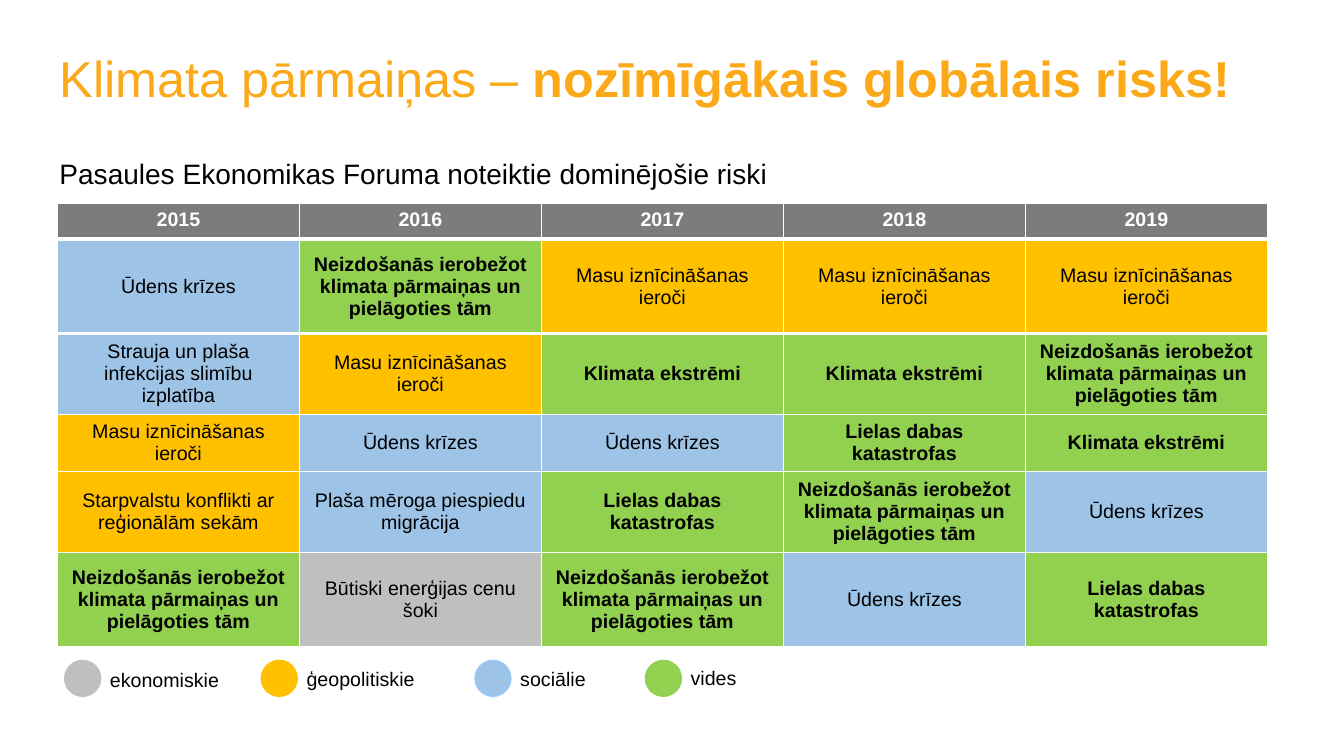
import lxml.etree
import pptx
import pptx.dml.color
import pptx.enum.shapes
import pptx.enum.text
import pptx.oxml.ns
import pptx.util
from pptx.dml.color import RGBColor
from pptx.util import Inches

ORANGE = RGBColor(0xFB, 0xA9, 0x19)
BLACK = RGBColor(0x00, 0x00, 0x00)
WHITE = RGBColor(0xFF, 0xFF, 0xFF)
HEADER_GREY = RGBColor(0x7C, 0x7C, 0x7C)
ECONOMIC = RGBColor(0xBF, 0xBF, 0xBF)
GEOPOLITICAL = RGBColor(0xFF, 0xC0, 0x00)
SOCIAL = RGBColor(0x9D, 0xC3, 0xE6)
SOCIAL_EDGE = RGBColor(0x99, 0xCC, 0xFF)
ENVIRONMENTAL = RGBColor(0x92, 0xD0, 0x50)

WEAPONS = "Masu iznīcināšanas ieroči"
WATER = "Ūdens krīzes"
EPIDEMICS = "Strauja un plaša infekcijas slimību izplatība"
CONFLICTS = "Starpvalstu konflikti ar reģionālām sekām"
MIGRATION = "Plaša mēroga piespiedu migrācija"
ENERGY = "Būtiski enerģijas cenu šoki"
CLIMATE_FAILURE = "Neizdošanās ierobežot klimata pārmaiņas un pielāgoties tām"
EXTREMES = "Klimata ekstrēmi"
DISASTERS = "Lielas dabas katastrofas"

RISK_COLORS = {
    WEAPONS: GEOPOLITICAL,
    CONFLICTS: GEOPOLITICAL,
    WATER: SOCIAL,
    EPIDEMICS: SOCIAL,
    MIGRATION: SOCIAL,
    ENERGY: ECONOMIC,
    CLIMATE_FAILURE: ENVIRONMENTAL,
    EXTREMES: ENVIRONMENTAL,
    DISASTERS: ENVIRONMENTAL,
}

RISKS_BY_YEAR = {
    "2015": [WATER, EPIDEMICS, WEAPONS, CONFLICTS, CLIMATE_FAILURE],
    "2016": [CLIMATE_FAILURE, WEAPONS, WATER, MIGRATION, ENERGY],
    "2017": [WEAPONS, EXTREMES, WATER, DISASTERS, CLIMATE_FAILURE],
    "2018": [WEAPONS, EXTREMES, DISASTERS, CLIMATE_FAILURE, WATER],
    "2019": [WEAPONS, CLIMATE_FAILURE, EXTREMES, WATER, DISASTERS],
}
ROW_HEIGHTS = [0.35, 0.94, 0.75, 0.53, 0.75, 0.94]

LEGEND = [
    ("ekonomiskie", ECONOMIC, ECONOMIC, 0.64, 6.58, 1.33),
    ("ģeopolitiskie", GEOPOLITICAL, GEOPOLITICAL, 2.59, 6.57, 1.32),
    ("sociālie", SOCIAL, SOCIAL_EDGE, 4.71, 6.57, 0.9),
    ("vides", ENVIRONMENTAL, ENVIRONMENTAL, 6.4, 6.56, 0.7),
]
DOT_SIZE = 0.36


def add_text(paragraph, text, size=14, color=BLACK, bold=False):
    run = paragraph.add_run()
    run.text = text
    run.font.name = "Arial"
    run.font.size = pptx.util.Pt(size)
    run.font.bold = bold
    run.font.color.rgb = color


def add_text_box(slide, left, top, width, height, wrap=False):
    frame = slide.shapes.add_textbox(
        Inches(left), Inches(top), Inches(width), Inches(height)
    ).text_frame
    frame.margin_left = frame.margin_right = Inches(0.09)
    frame.word_wrap = wrap
    if not wrap:
        frame.auto_size = pptx.enum.text.MSO_AUTO_SIZE.SHAPE_TO_FIT_TEXT
    return frame.paragraphs[0]


def add_border(cell, side, points):
    qn = pptx.oxml.ns.qn
    border = lxml.etree.Element(qn(f"a:{side}"), w=str(int(pptx.util.Pt(points))))
    fill = lxml.etree.SubElement(border, qn("a:solidFill"))
    lxml.etree.SubElement(fill, qn("a:srgbClr"), val=str(WHITE))
    cell._tc.get_or_add_tcPr().insert(0, border)


def fill_cell(cell, text, fill, **text_format):
    cell.fill.solid()
    cell.fill.fore_color.rgb = fill
    cell.margin_left = cell.margin_right = Inches(0.09)
    paragraph = cell.text_frame.paragraphs[0]
    paragraph.alignment = pptx.enum.text.PP_ALIGN.CENTER
    add_text(paragraph, text, **text_format)


def add_risk_table(slide):
    table = slide.shapes.add_table(
        len(ROW_HEIGHTS), len(RISKS_BY_YEAR),
        Inches(0.57), Inches(2.02), Inches(12), Inches(sum(ROW_HEIGHTS)),
    ).table
    table.horz_banding = False
    for row, height in zip(table.rows, ROW_HEIGHTS):
        row.height = Inches(height)
    for column, (year, risks) in enumerate(RISKS_BY_YEAR.items()):
        header = table.cell(0, column)
        fill_cell(header, year, HEADER_GREY, color=WHITE, bold=True)
        add_border(header, "lnB", 3)
        add_border(table.cell(1, column), "lnT", 3)
        for rank, risk in enumerate(risks, start=1):
            cell = table.cell(rank, column)
            cell.vertical_anchor = pptx.enum.text.MSO_ANCHOR.MIDDLE
            color = RISK_COLORS[risk]
            fill_cell(cell, risk, color, bold=color == ENVIRONMENTAL)


def add_legend_entry(slide, label, color, edge, left, label_top, label_width):
    dot = slide.shapes.add_shape(
        pptx.enum.shapes.MSO_SHAPE.OVAL,
        Inches(left), Inches(6.55), Inches(DOT_SIZE), Inches(DOT_SIZE),
    )
    dot.shadow.inherit = False
    dot.fill.solid()
    dot.fill.fore_color.rgb = color
    dot.line.color.rgb = edge
    dot.line.width = pptx.util.Pt(0.75)
    add_text(add_text_box(slide, left + DOT_SIZE, label_top, label_width, 0.33), label)


def main():
    presentation = pptx.Presentation()
    presentation.slide_width = Inches(13.33)
    presentation.slide_height = Inches(7.5)
    slide = presentation.slides.add_slide(presentation.slide_layouts[6])

    title = add_text_box(slide, 0.5, 0.49, 12.07, 1.02, wrap=True)
    title.line_spacing = 0.9
    add_text(title, "Klimata pārmaiņas – ", size=36, color=ORANGE)
    add_text(title, "nozīmīgākais globālais risks!", size=36, color=ORANGE, bold=True)

    add_risk_table(slide)
    for entry in LEGEND:
        add_legend_entry(slide, *entry)

    subtitle = add_text_box(slide, 0.5, 1.5, 7.26, 0.43)
    add_text(subtitle, "Pasaules Ekonomikas Foruma noteiktie dominējošie riski", size=20)

    presentation.save("out.pptx")


if __name__ == "__main__":
    main()
